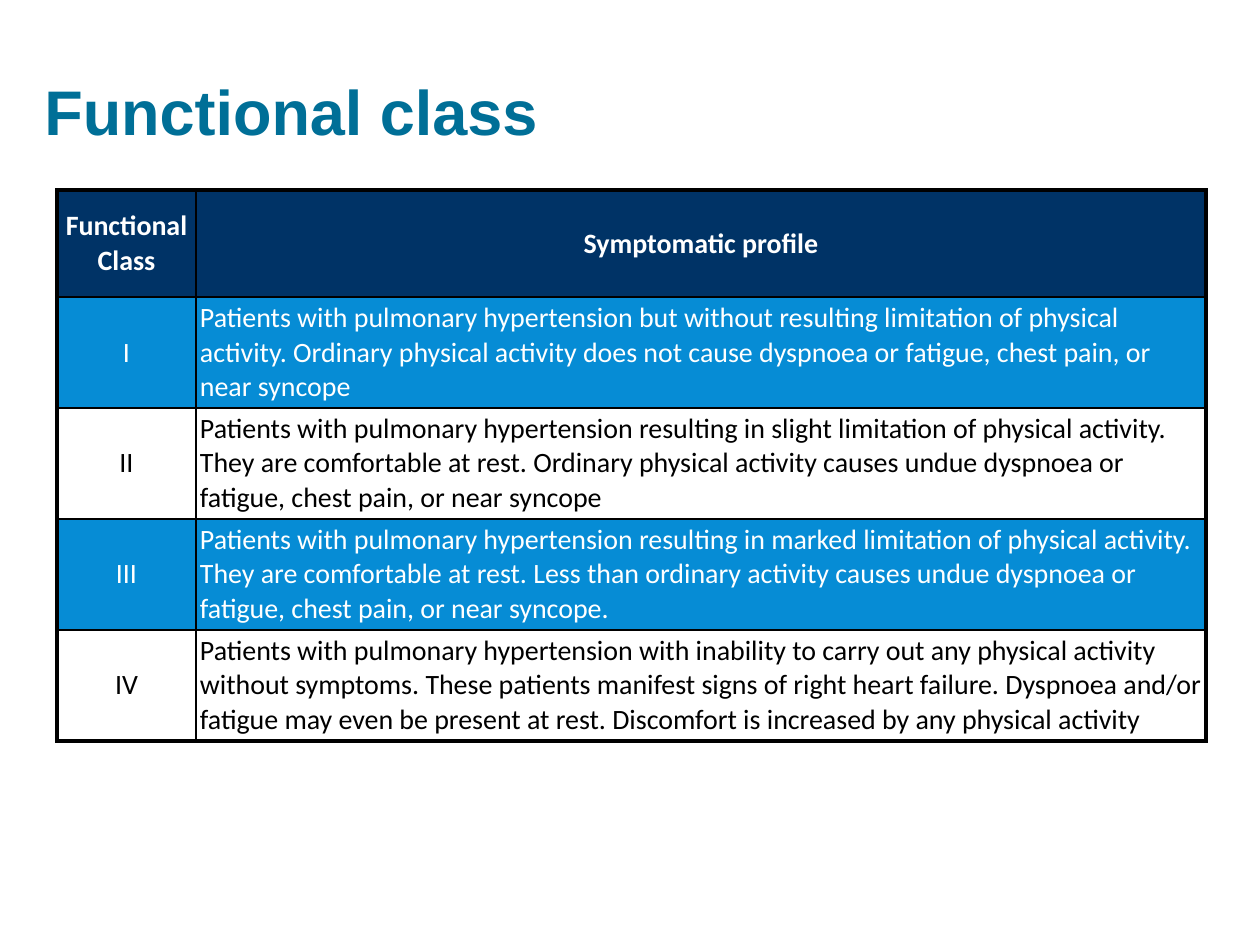
from dataclasses import dataclass

from lxml.etree import SubElement
from pptx import Presentation
from pptx.dml.color import RGBColor
from pptx.enum.text import MSO_ANCHOR, PP_ALIGN
from pptx.oxml.ns import qn
from pptx.util import Pt

PX = 914400 / 126


@dataclass(frozen=True)
class Theme:
    title: str = "006F97"
    header: str = "003366"
    band: str = "068CD5"
    white: str = "FFFFFF"
    black: str = "000000"
    title_font: str = "Arial"
    table_font: str = "Calibri"
    title_size: int = 36
    table_size: int = 16
    outer_line: float = 2.25
    inner_line: float = 1


THEME = Theme()

ROWS = [
    ("Functional Class", "Symptomatic profile"),
    ("I", "Patients with pulmonary hypertension but without resulting limitation of "
          "physical activity. Ordinary physical activity does not cause dyspnoea or "
          "fatigue, chest pain, or near syncope"),
    ("II", "Patients with pulmonary hypertension resulting in slight limitation of "
           "physical activity. They are comfortable at rest. Ordinary physical activity "
           "causes undue dyspnoea or fatigue, chest pain, or near syncope"),
    ("III", "Patients with pulmonary hypertension resulting in marked limitation of "
            "physical activity. They are comfortable at rest. Less than ordinary activity "
            "causes undue dyspnoea or fatigue, chest pain, or near syncope."),
    ("IV", "Patients with pulmonary hypertension with inability to carry out any physical "
           "activity without symptoms. These patients manifest signs of right heart "
           "failure. Dyspnoea and/or fatigue may even be present at rest. Discomfort is "
           "increased by any physical activity"),
]


def px(n):
    return round(n * PX)


def set_attrs(obj, **values):
    for name, value in values.items():
        setattr(obj, name, value)


def write(tf, text, align, color, **font):
    p = tf.paragraphs[0]
    p.alignment = align
    r = p.add_run()
    r.text = text
    set_attrs(r.font, **font)
    r.font.color.rgb = RGBColor.from_string(color)


def set_borders(cell, widths):
    tc_pr = cell._tc.get_or_add_tcPr()
    for i, (side, width) in enumerate(widths.items()):
        ln = SubElement(tc_pr, qn(f"a:ln{side}"), w=str(Pt(width)))
        fill = SubElement(ln, qn("a:solidFill"))
        SubElement(fill, qn("a:srgbClr"), val=THEME.black)
        tc_pr.insert(i, ln)  # borders come before the cell fill


def add_title(s, x, y, w, h):
    tf = s.shapes.add_textbox(px(x), px(y), px(w), px(h)).text_frame
    set_attrs(tf, word_wrap=True, vertical_anchor=MSO_ANCHOR.MIDDLE)
    write(tf, "Functional class", PP_ALIGN.LEFT, THEME.title,
          name=THEME.title_font, size=Pt(THEME.title_size), bold=True)


def add_class_table(s, x, y, w, h, label_w=139, header_h=107):
    n_rows, n_cols = len(ROWS), len(ROWS[0])
    table = s.shapes.add_table(n_rows, n_cols, px(x), px(y), px(w), px(h)).table

    # Narrow label column, header row, then equal rows
    for col, width in zip(table.columns, (label_w, w - label_w)):
        col.width = px(width)
    row_h = (h - header_h) // (n_rows - 1)
    for i, row in enumerate(table.rows):
        row.height = px(row_h if i else header_h)

    for i, texts in enumerate(ROWS):
        header, banded = i == 0, i % 2 == 1
        fill = THEME.header if header else THEME.band if banded else THEME.white
        color = THEME.white if header or banded else THEME.black
        for j, text in enumerate(texts):
            cell = table.cell(i, j)
            set_attrs(cell, vertical_anchor=MSO_ANCHOR.MIDDLE, margin_left=px(4),
                      margin_right=px(4), margin_top=px(4), margin_bottom=px(4))
            cell.fill.solid()
            cell.fill.fore_color.rgb = RGBColor.from_string(fill)
            align = PP_ALIGN.CENTER if header or j == 0 else PP_ALIGN.LEFT
            write(cell.text_frame, text, align, color, name=THEME.table_font,
                  size=Pt(THEME.table_size), bold=header)

            # Thick frame around thin inner rules
            on_edge = {"L": j == 0, "R": j == n_cols - 1,
                       "T": i == 0, "B": i == n_rows - 1}
            set_borders(cell, {side: THEME.outer_line if edge else THEME.inner_line
                               for side, edge in on_edge.items()})


def main():
    prs = Presentation()
    set_attrs(prs, slide_width=px(1260), slide_height=px(945))
    s = prs.slides.add_slide(prs.slide_layouts[6])
    add_title(s, 32, 32, 1134, 157)
    add_class_table(s, 57, 190, 1149, 551)
    prs.save("out.pptx")


if __name__ == "__main__":
    main()
